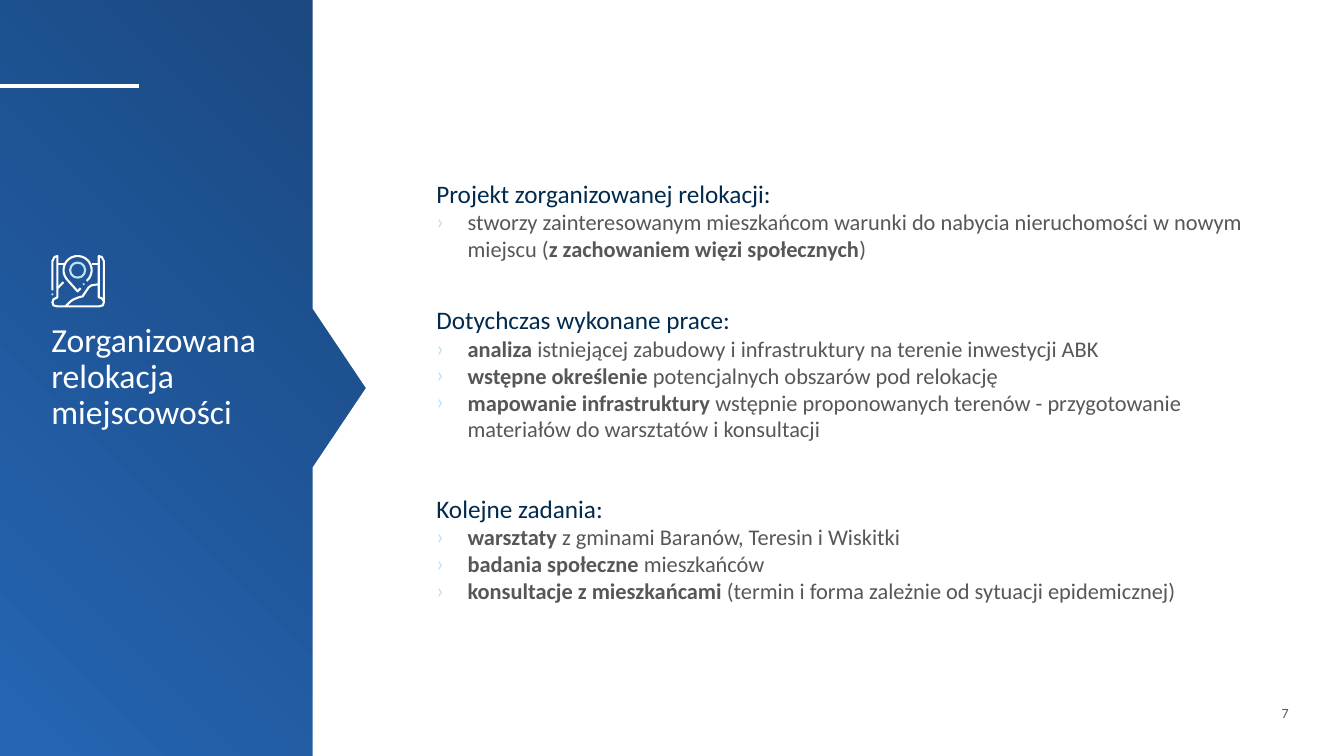
import math

import pptx
import pptx.dml.color
import pptx.enum.shapes
import pptx.enum.text
import pptx.oxml
import pptx.oxml.ns
import pptx.util
from pptx.util import Inches

FONT = "Calibri"
COLORS = {
    "dark": "102B4D",
    "blue": "2565B3",
    "white": "FFFFFF",
    "navy": "002A4E",
    "grey": "575757",
    "sky": "BDE2F8",
}
SLIDE_WIDTH, SLIDE_HEIGHT = 13.33, 7.5
PANEL_WIDTH = 3.1
TEXT_INDENT = 0.31

# Heading, space before it in points, bullets as (text, bold) spans
SECTIONS = [
    ("Projekt zorganizowanej relokacji:", 0, [
        [("stworzy zainteresowanym mieszkańcom warunki do nabycia "
          "nieruchomości w nowym miejscu (", False),
         ("z zachowaniem więzi społecznych", True), (")", False)],
    ]),
    ("Dotychczas wykonane prace:", 19.5, [
        [("analiza ", True),
         ("istniejącej zabudowy i infrastruktury na terenie inwestycji ABK", False)],
        [("wstępne określenie ", True),
         ("potencjalnych obszarów pod relokację", False)],
        [("mapowanie infrastruktury ", True),
         ("wstępnie proponowanych terenów - przygotowanie materiałów "
          "do warsztatów i konsultacji", False)],
    ]),
    ("Kolejne zadania:", 25.5, [
        [("warsztaty", True), (" z gminami Baranów, Teresin i Wiskitki", False)],
        [("badania społeczne ", True), ("mieszkańców", False)],
        [("konsultacje z mieszkańcami ", True),
         ("(termin i forma zależnie od sytuacji epidemicznej)", False)],
    ]),
]


def rgb(name):
    return pptx.dml.color.RGBColor.from_string(COLORS[name])


def add_span(para, text, size=16, color="grey", bold=False):
    span = para.add_run()
    span.text = text
    span.font.name = FONT
    span.font.size = pptx.util.Pt(size)
    span.font.bold = bold
    span.font.color.rgb = rgb(color)


def add_box(page, left, top, width, height, anchor, inset=True):
    box = page.shapes.add_textbox(*map(Inches, (left, top, width, height)))
    frame = box.text_frame
    frame.word_wrap = True
    frame.vertical_anchor = anchor
    if not inset:
        frame.margin_left = frame.margin_right = 0
        frame.margin_top = frame.margin_bottom = 0
    return frame


def add_bullet(para):
    properties = para._p.get_or_add_pPr()
    properties.set("marL", str(Inches(TEXT_INDENT)))
    properties.set("indent", str(-Inches(TEXT_INDENT)))
    namespace = pptx.oxml.ns.nsdecls("a")
    for xml in (
        f'<a:buClr {namespace}><a:srgbClr val="{COLORS["sky"]}"/></a:buClr>',
        f'<a:buFont {namespace} typeface="{FONT}"/>',
        f'<a:buChar {namespace} char="›"/>',
    ):
        properties.append(pptx.oxml.parse_xml(xml))


def add_outline(page, points, closed=False):
    points = [(Inches(x), Inches(y)) for x, y in points]
    builder = page.shapes.build_freeform(*points[0], scale=1.0)
    builder.add_line_segments(points[1:], close=closed)
    shape = builder.convert_to_shape()
    shape.shadow.inherit = False
    return shape


def add_oval(page, center_x, center_y, diameter):
    oval = page.shapes.add_shape(
        pptx.enum.shapes.MSO_SHAPE.OVAL,
        Inches(center_x - diameter / 2), Inches(center_y - diameter / 2),
        Inches(diameter), Inches(diameter))
    oval.shadow.inherit = False
    return oval


def add_backdrop(page):
    # Diagonal gradient
    fill = page.background.fill
    fill.gradient()
    fill.gradient_angle = 225
    for stop, name in zip(fill.gradient_stops, ("dark", "blue")):
        stop.color.rgb = rgb(name)

    # White content area, notched so the panel points into it
    middle, half, depth = 3.85, 0.79, 0.53
    area = add_outline(page, [
        (PANEL_WIDTH, 0), (SLIDE_WIDTH, 0), (SLIDE_WIDTH, SLIDE_HEIGHT),
        (PANEL_WIDTH, SLIDE_HEIGHT), (PANEL_WIDTH, middle + half),
        (PANEL_WIDTH + depth, middle), (PANEL_WIDTH, middle - half),
    ], closed=True)
    area.fill.solid()
    area.fill.fore_color.rgb = rgb("white")
    area.line.fill.background()

    # Accent rule
    rule = page.shapes.add_connector(
        pptx.enum.shapes.MSO_CONNECTOR.STRAIGHT,
        Inches(1.38), Inches(0.85), 0, Inches(0.85))
    rule.line.color.rgb = rgb("white")
    rule.line.width = pptx.util.Pt(3)
    rule._element.spPr.append(pptx.oxml.parse_xml(
        f'<a:effectLst {pptx.oxml.ns.nsdecls("a")}/>'))


def add_map_icon(page, left, top):
    pin_x, pin_y, radius = 0.26, 0.15, 0.14
    pin_arc = [(pin_x + radius * math.cos(math.radians(angle)),
                pin_y + radius * math.sin(math.radians(angle)))
               for angle in range(140, 411, 15)]
    strokes = [
        # Rolled sheet
        [(0.01, 0.35), (0.01, 0.06), (0.03, 0.02), (0.06, 0.01), (0.06, 0.42),
         (0.02, 0.44), (0.01, 0.47), (0.02, 0.5), (0.06, 0.51), (0.47, 0.51),
         (0.51, 0.5), (0.52, 0.47), (0.52, 0.06), (0.5, 0.02), (0.47, 0.01),
         (0.47, 0.42), (0.5, 0.43), (0.52, 0.46)],
        # Top edges and crease
        [(0.06, 0.09), (0.13, 0.09)],
        [(0.4, 0.09), (0.47, 0.09)],
        [(0.06, 0.33), (0.12, 0.27)],
        # River
        [(0.14, 0.51), (0.19, 0.46), (0.22, 0.44), (0.27, 0.42), (0.31, 0.41),
         (0.33, 0.38), (0.37, 0.32), (0.4, 0.3), (0.47, 0.29)],
        # Pin
        [(0.29, 0.33), (pin_x, 0.36)] + pin_arc,
    ]
    for stroke in strokes:
        shape = add_outline(page, [(left + x, top + y) for x, y in stroke])
        shape.fill.background()
        shape.line.color.rgb = rgb("white")
        shape.line.width = pptx.util.Pt(1.5)

    # Pin eye and dots
    eye = add_oval(page, left + pin_x, top + pin_y, 0.15)
    eye.fill.background()
    eye.line.color.rgb = rgb("sky")
    eye.line.width = pptx.util.Pt(1.5)
    for x, y in ((0.01, 0.39), (0.32, 0.29)):
        dot = add_oval(page, left + x, top + y, 0.02)
        dot.fill.solid()
        dot.fill.fore_color.rgb = rgb("sky")
        dot.line.fill.background()


def add_title(page, left, top, width, height):
    frame = add_box(page, left, top, width, height,
                    pptx.enum.text.MSO_ANCHOR.MIDDLE, inset=False)
    para = frame.paragraphs[0]
    para.line_spacing = 0.9
    add_span(para, "Zorganizowana relokacja miejscowości", size=24, color="white")


def add_sections(page, left, top, width, height):
    frame = add_box(page, left, top, width, height, pptx.enum.text.MSO_ANCHOR.TOP)
    for index, (heading, space, bullets) in enumerate(SECTIONS):
        para = frame.add_paragraph() if index else frame.paragraphs[0]
        para.line_spacing = 1.5
        if space:
            para.space_before = pptx.util.Pt(space)
        add_span(para, heading, size=18, color="navy")
        for spans in bullets:
            para = frame.add_paragraph()
            add_bullet(para)
            for text, bold in spans:
                add_span(para, text, bold=bold)


def add_page_number(page, left, top, width, height):
    frame = add_box(page, left, top, width, height,
                    pptx.enum.text.MSO_ANCHOR.BOTTOM, inset=False)
    para = frame.paragraphs[0]
    para.alignment = pptx.enum.text.PP_ALIGN.RIGHT
    add_span(para, "7", size=10)


def main():
    deck = pptx.Presentation()
    deck.slide_width = Inches(SLIDE_WIDTH)
    deck.slide_height = Inches(SLIDE_HEIGHT)
    page = deck.slides.add_slide(deck.slide_layouts[6])
    add_backdrop(page)
    add_page_number(page, 12.36, 6.99, 0.42, 0.17)
    add_title(page, 0.51, 2.49, 2.25, 2.51)
    add_sections(page, 4.23, 1.57, 8.33, 4.51)
    add_map_icon(page, 0.51, 2.53)
    deck.save("out.pptx")


if __name__ == "__main__":
    main()
